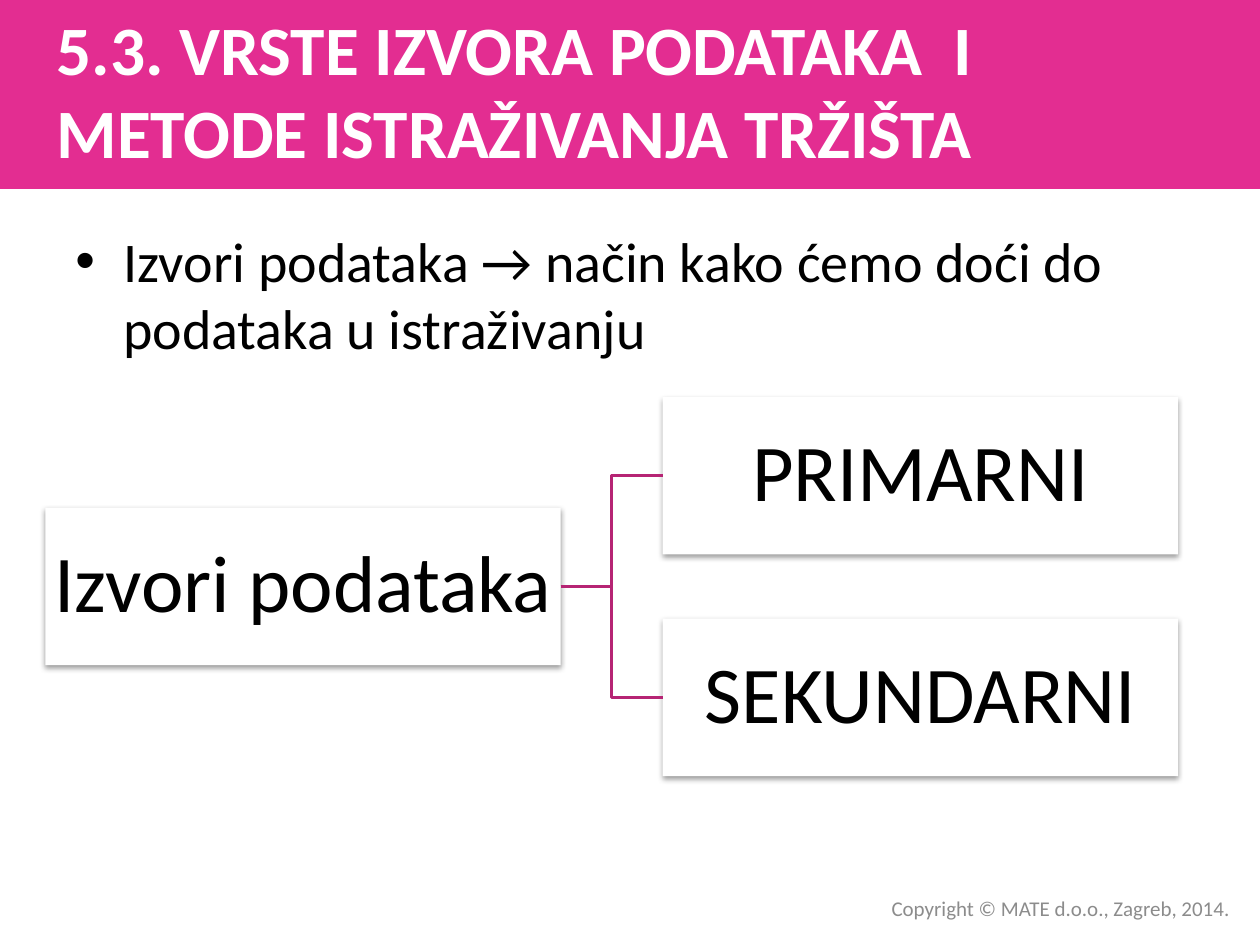
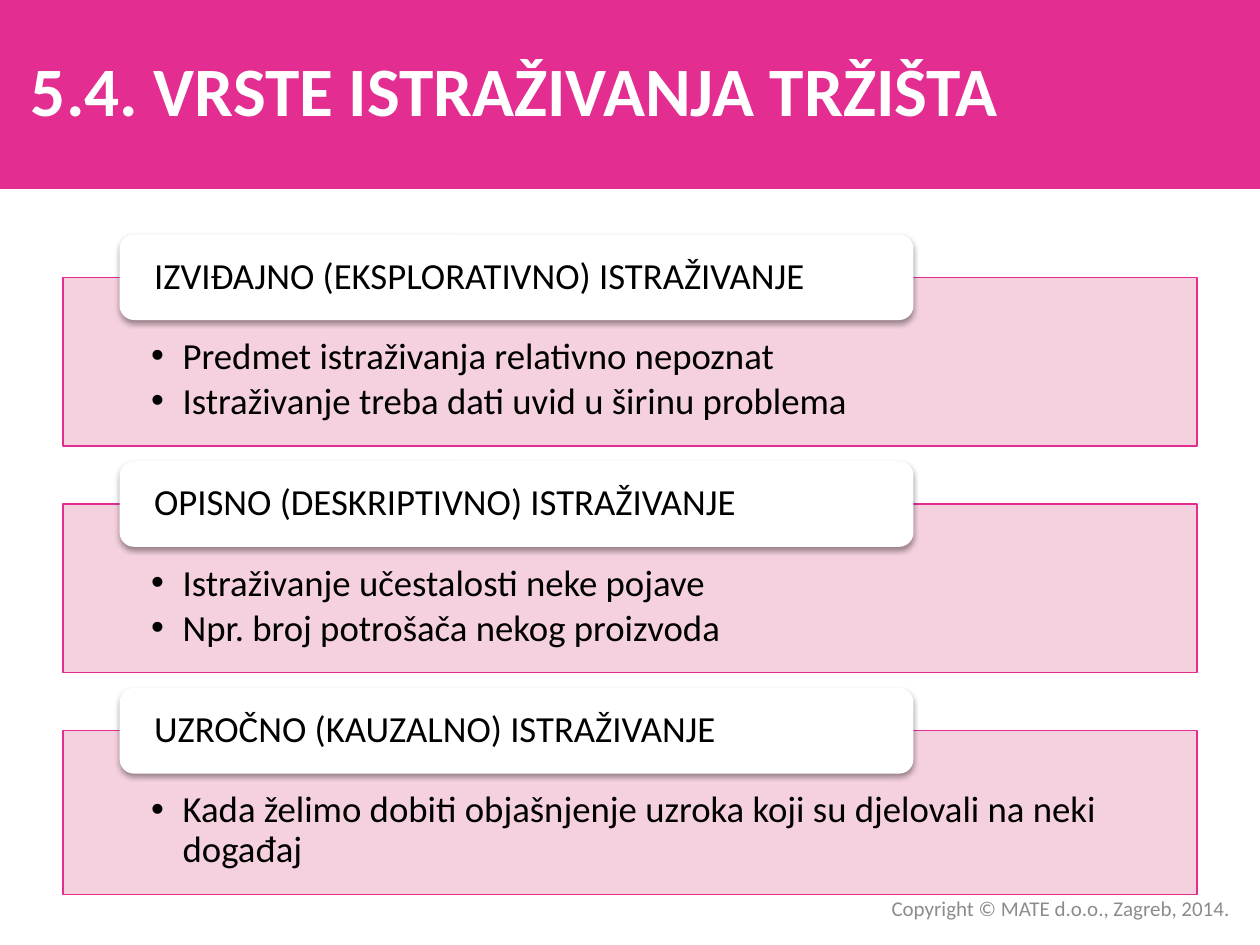
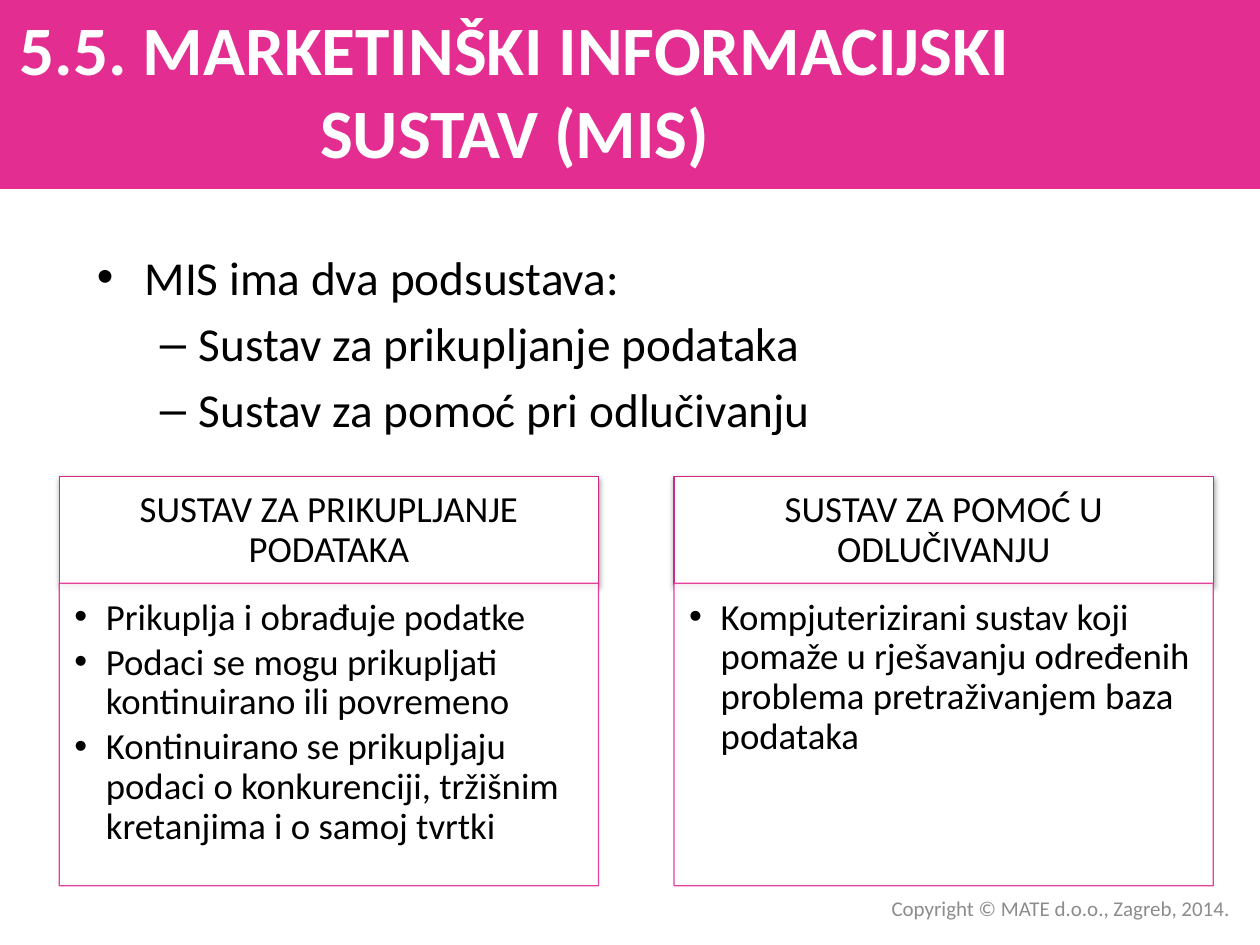
from dataclasses import dataclass
from typing import NamedTuple

import lxml.etree
import pptx
import pptx.dml.color
import pptx.enum.shapes
import pptx.enum.text
import pptx.oxml
import pptx.oxml.ns
import pptx.util

PX = 9144  # EMU per px, 100 px to the inch
SHAPE = pptx.enum.shapes.MSO_SHAPE
ALIGN = pptx.enum.text.PP_ALIGN
ANCHOR = pptx.enum.text.MSO_ANCHOR
qn = pptx.oxml.ns.qn


@dataclass(frozen=True)
class Theme:
    font: str = "Calibri"
    bullet_font: str = "Arial"
    pink: str = "E32D91"
    dark_pink: str = "B62474"
    header_line: str = "CE2984"
    pale_pink: str = "F4CDDC"
    white: str = "FFFFFF"
    black: str = "000000"
    grey: str = "8C8C8C"
    title: float = 39.6
    lead: int = 32
    list: int = 27
    node: int = 46
    card: int = 21
    footer: int = 12


THEME = Theme()


class Box(NamedTuple):
    x: int
    y: int
    w: int
    h: int


class Bullet(NamedTuple):
    char: str
    left: int
    hang: int


class Research(NamedTuple):
    heading: str
    points: list[str]
    height: int = 134


class Subsystem(NamedTuple):
    heading: str
    points: list[str]


DOT = Bullet("•", 38, 38)
DASH = Bullet("–", 81, 31)
CARD_DOT = Bullet("•", 25, 25)

BAND = Box(0, 0, 1000, 150)
TITLE = Box(0, 8, 817, 125)
FOOTER = Box(469, 706, 517, 30)
FOOTER_TEXT = "Copyright © MATE d.o.o., Zagreb, 2014."

RESEARCH = [
    Research("IZVIĐAJNO (EKSPLORATIVNO) ISTRAŽIVANJE",
             ["Predmet istraživanja relativno nepoznat",
              "Istraživanje treba dati uvid u širinu problema"]),
    Research("OPISNO (DESKRIPTIVNO) ISTRAŽIVANJE",
             ["Istraživanje učestalosti neke pojave",
              "Npr. broj potrošača nekog proizvoda"]),
    Research("UZROČNO (KAUZALNO) ISTRAŽIVANJE",
             ["Kada želimo dobiti objašnjenje uzroka koji su djelovali na neki događaj"],
             height=130),
]
SUBSYSTEMS = [
    Subsystem("SUSTAV ZA PRIKUPLJANJE PODATAKA",
              ["Prikuplja i obrađuje podatke",
               "Podaci se mogu prikupljati kontinuirano ili povremeno",
               "Kontinuirano se prikupljaju podaci o konkurenciji, "
               "tržišnim kretanjima i o samoj tvrtki"]),
    Subsystem("SUSTAV ZA POMOĆ U ODLUČIVANJU",
              ["Kompjuterizirani sustav koji pomaže u rješavanju određenih "
               "problema pretraživanjem baza podataka"]),
]


def emu(*lengths: int) -> list[int]:
    return [n * PX for n in lengths]


def rgb(colour: str) -> pptx.dml.color.RGBColor:
    return pptx.dml.color.RGBColor.from_string(colour)


def set_alpha(fill_owner, percent: int) -> None:
    """Make the solid colour found under an XML element partly transparent."""
    colour = fill_owner.find(qn("a:solidFill")).find(qn("a:srgbClr"))
    lxml.etree.SubElement(colour, qn("a:alpha")).set("val", str(percent * 1000))


def add_soft_shadow(sp) -> None:
    effects = sp._element.spPr.find(qn("a:effectLst"))
    shadow = lxml.etree.SubElement(effects, qn("a:outerShdw"), blurRad="40000",
                                   dist="20000", dir="5400000", rotWithShape="0")
    colour = lxml.etree.SubElement(shadow, qn("a:srgbClr"), val=THEME.black)
    lxml.etree.SubElement(colour, qn("a:alpha"), val="38000")


def add_panel(s, box: Box, fill: str, *, line: str | None = None, kind=SHAPE.RECTANGLE,
              shadow: bool = False, alpha: int = 100, line_alpha: int = 100):
    sp = s.shapes.add_shape(kind, *emu(*box))
    sp.shadow.inherit = False
    sp.fill.solid()
    sp.fill.fore_color.rgb = rgb(fill)
    if alpha < 100:
        set_alpha(sp._element.spPr, alpha)
    if line:
        sp.line.color.rgb = rgb(line)
        sp.line.width = pptx.util.Pt(0.75)
        if line_alpha < 100:
            set_alpha(sp.line._get_or_add_ln(), line_alpha)
    else:
        sp.line.fill.background()
    if shadow:
        add_soft_shadow(sp)
    return sp


def set_bullet(p, bullet: Bullet) -> None:
    pPr = p._p.get_or_add_pPr()
    pPr.set("marL", str(bullet.left * PX))
    pPr.set("indent", str(-bullet.hang * PX))
    lxml.etree.SubElement(pPr, qn("a:buFont"), typeface=THEME.bullet_font)
    lxml.etree.SubElement(pPr, qn("a:buChar"), char=bullet.char)


def write(sp, text: str | list[str], *, size: float, colour: str = THEME.black,
          bold: bool = False, align=ALIGN.LEFT, anchor=ANCHOR.TOP,
          insets: tuple[int, int, int, int] = (10, 5, 10, 5),
          bullets: list[Bullet] | None = None, spacing: float = 1.0,
          before: float = 0, after: float = 0) -> None:
    """Write one paragraph per text; the last bullet serves all remaining ones."""
    tf = sp.text_frame
    tf.word_wrap = True
    tf.vertical_anchor = anchor
    tf.margin_left, tf.margin_top, tf.margin_right, tf.margin_bottom = emu(*insets)
    for i, line in enumerate([text] if isinstance(text, str) else text):
        p = tf.add_paragraph() if i else tf.paragraphs[0]
        if bullets:
            set_bullet(p, bullets[min(i, len(bullets) - 1)])
        p.alignment = align
        p.line_spacing = spacing
        p.space_before = pptx.util.Pt(before if i else 0)
        p.space_after = pptx.util.Pt(after)
        r = p.add_run()
        r.text = line
        r.font.name = THEME.font
        r.font.size = pptx.util.Pt(size)
        r.font.bold = bold
        r.font.color.rgb = rgb(colour)


def add_text(s, box: Box, text: str | list[str], **fmt) -> None:
    write(s.shapes.add_textbox(*emu(*box)), text, **fmt)


def add_slide(prs, title: str):
    s = prs.slides.add_slide(prs.slide_layouts[6])
    add_panel(s, BAND, THEME.pink)
    add_text(s, TITLE, title, size=THEME.title, colour=THEME.white, bold=True,
             align=ALIGN.CENTER, anchor=ANCHOR.MIDDLE)
    return s


def add_footer(s) -> None:
    add_text(s, FOOTER, FOOTER_TEXT, size=THEME.footer, colour=THEME.grey,
             align=ALIGN.RIGHT, anchor=ANCHOR.MIDDLE)


def add_node(s, x: int, y: int, text: str):
    sp = add_panel(s, Box(x, y, 409, 125), THEME.white, shadow=True)
    write(sp, text, size=THEME.node, align=ALIGN.CENTER, anchor=ANCHOR.MIDDLE,
          insets=(3, 3, 3, 3), spacing=0.9)
    return sp


def add_branch(s, parent, child) -> None:
    """Join the right side of the parent to the left side of the child."""
    cx = s.shapes.add_connector(pptx.enum.shapes.MSO_CONNECTOR.ELBOW, 0, 0, 0, 0)
    cx.begin_connect(parent, 3)
    cx.end_connect(child, 1)
    cx.line.color.rgb = rgb(THEME.dark_pink)
    cx.line.width = pptx.util.Pt(2)
    lxml.etree.SubElement(cx._element.spPr, qn("a:effectLst"))


def add_research(s, y: int, item: Research) -> None:
    body = add_panel(s, Box(50, y, 900, item.height), THEME.pale_pink,
                     line=THEME.pink, alpha=90)
    write(body, item.points, size=THEME.card, insets=(70, 48, 70, 16),
          bullets=[CARD_DOT], spacing=0.9, after=3)
    tab = add_panel(s, Box(95, y - 34, 630, 68), THEME.white,
                    kind=SHAPE.ROUNDED_RECTANGLE, shadow=True)
    write(tab, item.heading, size=THEME.card, anchor=ANCHOR.MIDDLE,
          insets=(24, 0, 24, 0), spacing=0.9)


def add_subsystem(s, x: int, item: Subsystem) -> None:
    header = add_panel(s, Box(x, 378, 428, 86), THEME.white, line=THEME.header_line,
                       shadow=True)
    write(header, item.heading, size=THEME.card, align=ALIGN.CENTER,
          anchor=ANCHOR.MIDDLE, insets=(16, 9, 16, 9), spacing=0.9)
    body = add_panel(s, Box(x, 463, 428, 240), THEME.white, line=THEME.pink,
                     alpha=90, line_alpha=90)
    write(body, item.points, size=THEME.card, insets=(12, 12, 16, 18),
          bullets=[CARD_DOT], spacing=0.9, after=3)


def build_sources(prs) -> None:
    s = add_slide(prs, "5.3. VRSTE IZVORA PODATAKA  I METODE ISTRAŽIVANJA TRŽIŠTA")
    add_text(s, Box(50, 175, 900, 495),
             "Izvori podataka → način kako ćemo doći do podataka u istraživanju",
             size=THEME.lead, bullets=[DOT])
    root = add_node(s, 36, 403, "Izvori podataka")
    for i, name in enumerate(["PRIMARNI", "SEKUNDARNI"]):
        add_branch(s, root, add_node(s, 526, 315 + 176 * i, name))
    add_footer(s)


def build_research(prs) -> None:
    s = add_slide(prs, "5.4. VRSTE ISTRAŽIVANJA TRŽIŠTA")
    for i, item in enumerate(RESEARCH):
        add_research(s, 220 + 180 * i, item)
    add_footer(s)


def build_information_system(prs) -> None:
    s = add_slide(prs, "5.5. MARKETINŠKI INFORMACIJSKI SUSTAV (MIS)")
    for i, item in enumerate(SUBSYSTEMS):
        add_subsystem(s, 47 + 488 * i, item)
    add_text(s, Box(67, 192, 900, 495),
             ["MIS ima dva podsustava:",
              "Sustav za prikupljanje podataka",
              "Sustav za pomoć pri odlučivanju"],
             size=THEME.list, bullets=[DOT, DASH], before=5.4)
    add_footer(s)


def main() -> None:
    prs = pptx.Presentation()
    prs.slide_width, prs.slide_height = emu(1000, 750)
    build_sources(prs)
    build_research(prs)
    build_information_system(prs)
    prs.save("out.pptx")


if __name__ == "__main__":
    main()
